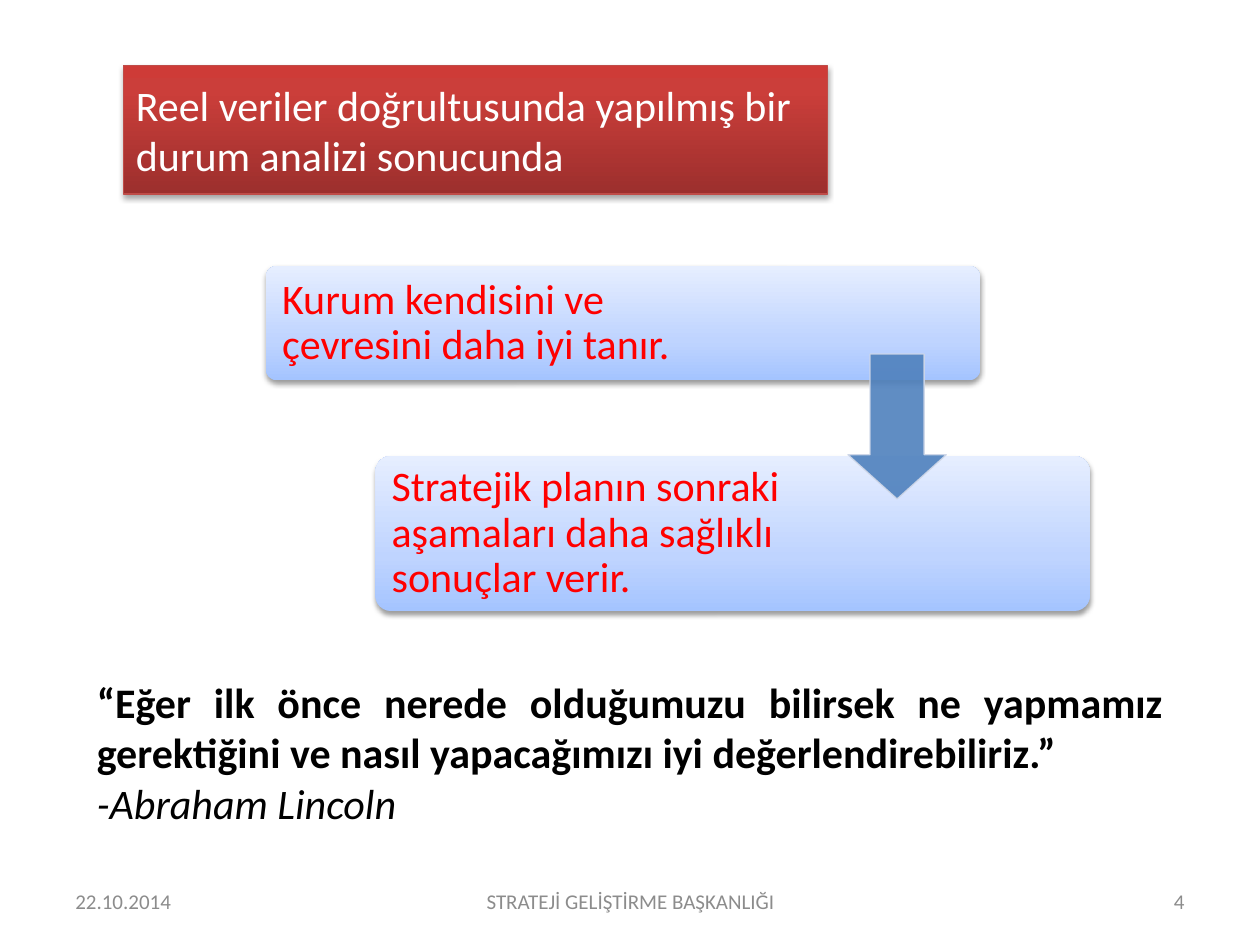
from lxml import etree
from pptx import Presentation
from pptx import util as u
from pptx.dml.color import RGBColor
from pptx.enum import shapes, text
from pptx.oxml.ns import qn

RED_STOPS = [(0, "9C2F2D"), (80, "CB3E3A"), (100, "CE3B37")]
BLUE_STOPS = [(0, "A4C4FF"), (35, "BFD4FF"), (100, "E6EEFF")]
LEFT, CENTER, RIGHT, JUSTIFY = (
    text.PP_ALIGN.LEFT, text.PP_ALIGN.CENTER, text.PP_ALIGN.RIGHT, text.PP_ALIGN.JUSTIFY)


def rgb(value):
    """Turn a hex string into a colour."""
    return RGBColor.from_string(value)


def add_color(parent, value, alpha=100):
    """Append a colour element with its opacity in percent."""
    color = etree.SubElement(parent, qn("a:srgbClr"), val=value)
    if alpha < 100:
        etree.SubElement(color, qn("a:alpha"), val=str(alpha * 1000))


def set_gradient(shape, stops):
    """Fill a shape with a gradient that rises from the bottom."""
    shape.fill.gradient()
    shape.fill.gradient_angle = 90
    stop_list = shape.fill._fill._gradFill.find(qn("a:gsLst"))
    for old_stop in list(stop_list):
        stop_list.remove(old_stop)
    for position, color in stops:
        stop = etree.SubElement(stop_list, qn("a:gs"), pos=str(position * 1000))
        add_color(stop, color)


def set_shadow(shape, alpha, distance):
    """Drop a soft black shadow straight down."""
    effects = shape._element.spPr.find(qn("a:effectLst"))
    shadow = etree.SubElement(
        effects, qn("a:outerShdw"), blurRad=str(u.Pt(3.1)), dist=str(u.Pt(distance)),
        dir="5400000", rotWithShape="0")
    add_color(shadow, "000000", alpha)


def add_box(slide, kind, place, line=None, adjustments=()):
    """Add a preset shape without the theme shadow."""
    box = slide.shapes.add_shape(kind, *map(u.Inches, place))
    box.shadow.inherit = False
    for index, value in enumerate(adjustments):
        box.adjustments[index] = value
    if line:
        box.line.color.rgb = rgb(line)
        box.line.width = u.Pt(0.75)
    else:
        box.line.fill.background()
    return box


def style_paragraph(paragraph, words, size, color, align=LEFT, bold=False, italic=False):
    """Write one paragraph in a single style."""
    paragraph.text = words
    paragraph.alignment = align
    font = paragraph.font
    font.name, font.size, font.color.rgb = "Calibri", u.Pt(size), rgb(color)
    font.bold, font.italic = bold, italic


def add_text(slide, place, words, size, color, align=LEFT):
    """Add a wrapped, vertically centred text box and return its frame."""
    frame = slide.shapes.add_textbox(*map(u.Inches, place)).text_frame
    frame.word_wrap = True
    frame.vertical_anchor = text.MSO_ANCHOR.MIDDLE
    style_paragraph(frame.paragraphs[0], words, size, color, align)
    return frame


def add_heading(slide):
    """Add the red heading bar."""
    heading = add_box(slide, shapes.MSO_SHAPE.RECTANGLE, (0.98, 0.52, 5.59, 1.02), "BF4C48")
    set_gradient(heading, RED_STOPS)
    set_shadow(heading, 35, 1.8)
    heading.text_frame.word_wrap = True
    style_paragraph(heading.text_frame.paragraphs[0],
                    "Reel veriler doğrultusunda yapılmış bir durum analizi sonucunda",
                    24, "FFFFFF")


def add_step(slide, left, top, height, text_width, words):
    """Add a blue step card with its red wording."""
    card = add_box(slide, shapes.MSO_SHAPE.ROUNDED_RECTANGLE,
                   (left, top, 5.67, height), adjustments=[0.1])
    set_gradient(card, BLUE_STOPS)
    set_shadow(card, 38, 1.6)
    place = (left + 0.03, top + 0.03, text_width, height - 0.06)
    frame = add_text(slide, place, words, 24, "FF0000")
    frame.margin_left = frame.margin_top = u.Inches(0.1)
    frame.margin_right = frame.margin_bottom = u.Inches(0.1)
    frame.paragraphs[0].line_spacing = 0.9


def add_step_arrow(slide):
    """Add the translucent arrow that leads to the second step."""
    arrow = add_box(slide, shapes.MSO_SHAPE.DOWN_ARROW, (6.73, 2.81, 0.78, 1.15),
                    "D0D8E8", [0.55, 0.45])
    arrow.fill.solid()
    arrow.fill.fore_color.rgb = rgb("4F81BD")
    for color in arrow._element.spPr.iter(qn("a:srgbClr")):
        etree.SubElement(color, qn("a:alpha"), val="90000")


def add_quote(slide):
    """Add the quotation and its author."""
    frame = add_text(
        slide, (0.67, 5.32, 8.66, 1.31),
        "“Eğer ilk önce nerede olduğumuzu bilirsek ne yapmamız gerektiğini "
        "ve nasıl yapacağımızı iyi değerlendirebiliriz.”", 24, "000000", JUSTIFY)
    frame.vertical_anchor = text.MSO_ANCHOR.TOP
    frame.auto_size = text.MSO_AUTO_SIZE.SHAPE_TO_FIT_TEXT
    frame.paragraphs[0].font.bold = True
    style_paragraph(frame.add_paragraph(), "-Abraham Lincoln", 24, "000000",
                    JUSTIFY, italic=True)


def main():
    """Build the slide and save it."""
    deck = Presentation()
    deck.slide_width, deck.slide_height = u.Inches(10), u.Inches(7.5)
    slide = deck.slides.add_slide(deck.slide_layouts[6])
    add_heading(slide)
    for left, width, words, align in [
        (0.5, 2.33, "22.10.2014", LEFT),
        (3.42, 3.17, "STRATEJİ GELİŞTİRME BAŞKANLIĞI", CENTER),
        (7.17, 2.33, "4", RIGHT),
    ]:
        add_text(slide, (left, 6.95, width, 0.4), words, 12, "8C8C8C", align)
    add_step(slide, 2.11, 2.11, 0.91, 3.89, "Kurum kendisini ve çevresini daha iyi tanır.")
    add_step(slide, 2.98, 3.62, 1.23, 3.44,
             "Stratejik planın sonraki aşamaları daha sağlıklı sonuçlar verir.")
    add_step_arrow(slide)
    add_quote(slide)
    deck.save("out.pptx")


if __name__ == "__main__":
    main()
